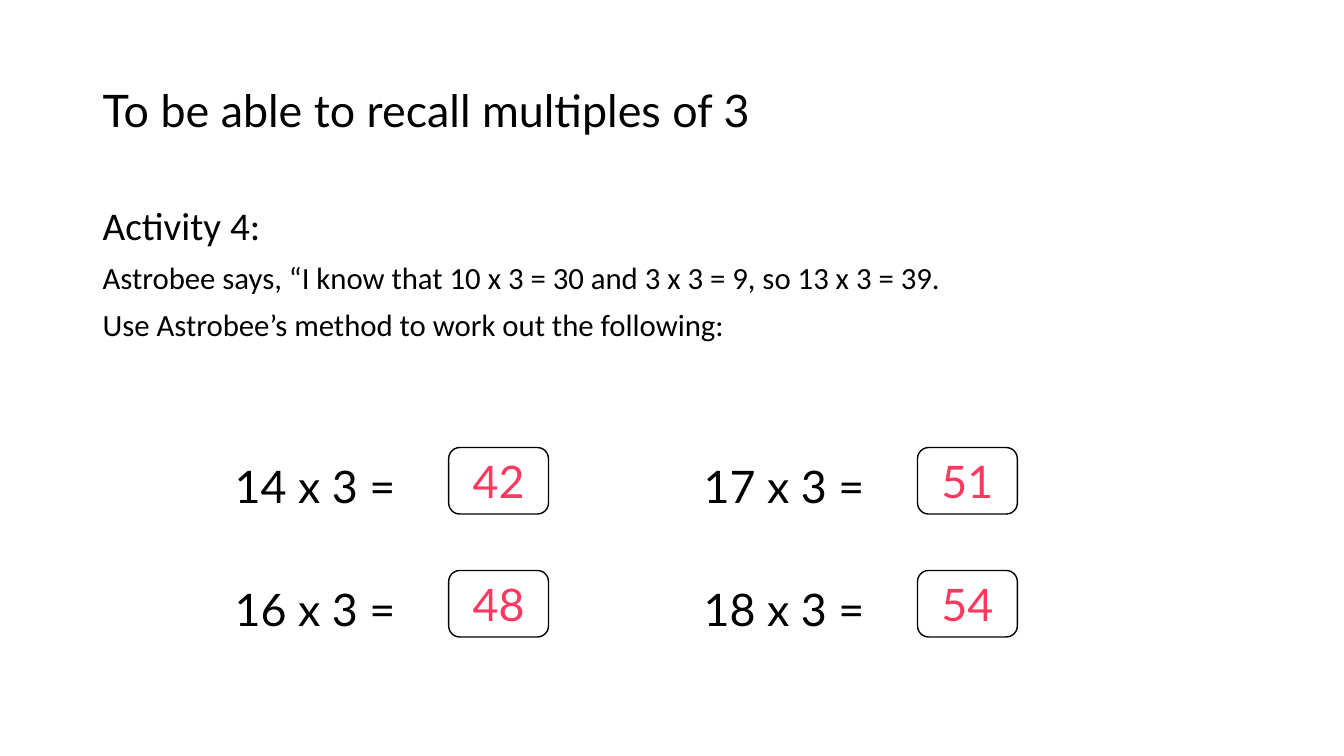
from dataclasses import dataclass

from pptx import Presentation
from pptx import util as u
from pptx.dml.color import RGBColor
from pptx.enum import shapes, text

PX = 9144  # EMU per px, 100 px to the inch
COLOURS = {"ink": "000000", "paper": "FFFFFF", "answer": "FF3860"}
HEADING_FONT, BODY_FONT = "Lato", "Calibri"
SUM_SIZE = 32

GRID_LEFT, GRID_TOP = 223, 444
COLUMN_STEP, ROW_STEP = 465, 122
ANSWER_OFFSET, QUESTION_DROP = 222, 6


@dataclass(frozen=True)
class Sum:
    factor: int
    column: int
    row: int


@dataclass(frozen=True)
class Line:
    wording: str
    size: int


SUMS = [Sum(14, 0, 0), Sum(16, 0, 1), Sum(17, 1, 0), Sum(18, 1, 1)]
TITLE = [Line("To be able to recall multiples of 3", 32)]
ACTIVITY = [
    Line("Activity 4:", 28),
    Line("Astrobee says, “I know that 10 x 3 = 30 and 3 x 3 = 9, so 13 x 3 = 39.", 22),
    Line("Use Astrobee’s method to work out the following:", 22),
]


def colour(name: str) -> RGBColor:
    return RGBColor.from_string(COLOURS[name])


def box(left: int, top: int, width: int, height: int) -> list[u.Emu]:
    return [u.Emu(length * PX) for length in (left, top, width, height)]


def write(paragraph, line: Line, font: str, ink: str = "ink") -> None:
    paragraph.text = line.wording
    for run in paragraph.runs:
        run.font.name = font
        run.font.size = u.Pt(line.size)
        run.font.color.rgb = colour(ink)


def add_lines(slide, place: list[u.Emu], lines: list[Line], font: str,
              spacing: float = 1.0, anchor=text.MSO_ANCHOR.TOP) -> None:
    frame = slide.shapes.add_textbox(*place).text_frame
    frame.word_wrap = True
    frame.vertical_anchor = anchor
    for index, line in enumerate(lines):
        paragraph = frame.add_paragraph() if index else frame.paragraphs[0]
        paragraph.line_spacing = spacing
        if index:
            paragraph.space_before = u.Pt(10)
        write(paragraph, line, font)


def add_answer(slide, place: list[u.Emu], answer: int) -> None:
    card = slide.shapes.add_shape(shapes.MSO_SHAPE.ROUNDED_RECTANGLE, *place)
    card.shadow.inherit = False
    card.fill.solid()
    card.fill.fore_color.rgb = colour("paper")
    card.line.color.rgb = colour("ink")
    card.line.width = u.Pt(1)
    card.text_frame.vertical_anchor = text.MSO_ANCHOR.MIDDLE
    paragraph = card.text_frame.paragraphs[0]
    paragraph.alignment = text.PP_ALIGN.CENTER
    write(paragraph, Line(str(answer), SUM_SIZE), HEADING_FONT, "answer")


def add_sum(slide, item: Sum) -> None:
    left = GRID_LEFT + item.column * COLUMN_STEP
    top = GRID_TOP + item.row * ROW_STEP
    question = Line(f"{item.factor} x 3 =", SUM_SIZE)
    add_lines(slide, box(left, top + QUESTION_DROP, 223, 64), [question], HEADING_FONT)
    add_answer(slide, box(left + ANSWER_OFFSET, top, 99, 66), item.factor * 3)


def main() -> None:
    deck = Presentation()
    deck.slide_width, deck.slide_height = u.Emu(1333 * PX), u.Emu(750 * PX)
    slide = deck.slides.add_slide(deck.slide_layouts[6])
    add_lines(slide, box(92, 40, 960, 145), TITLE, HEADING_FONT, 0.9, text.MSO_ANCHOR.MIDDLE)
    add_lines(slide, box(92, 200, 1150, 476), ACTIVITY, BODY_FONT, 0.9)
    for item in SUMS:
        add_sum(slide, item)
    deck.save("out.pptx")


if __name__ == "__main__":
    main()
